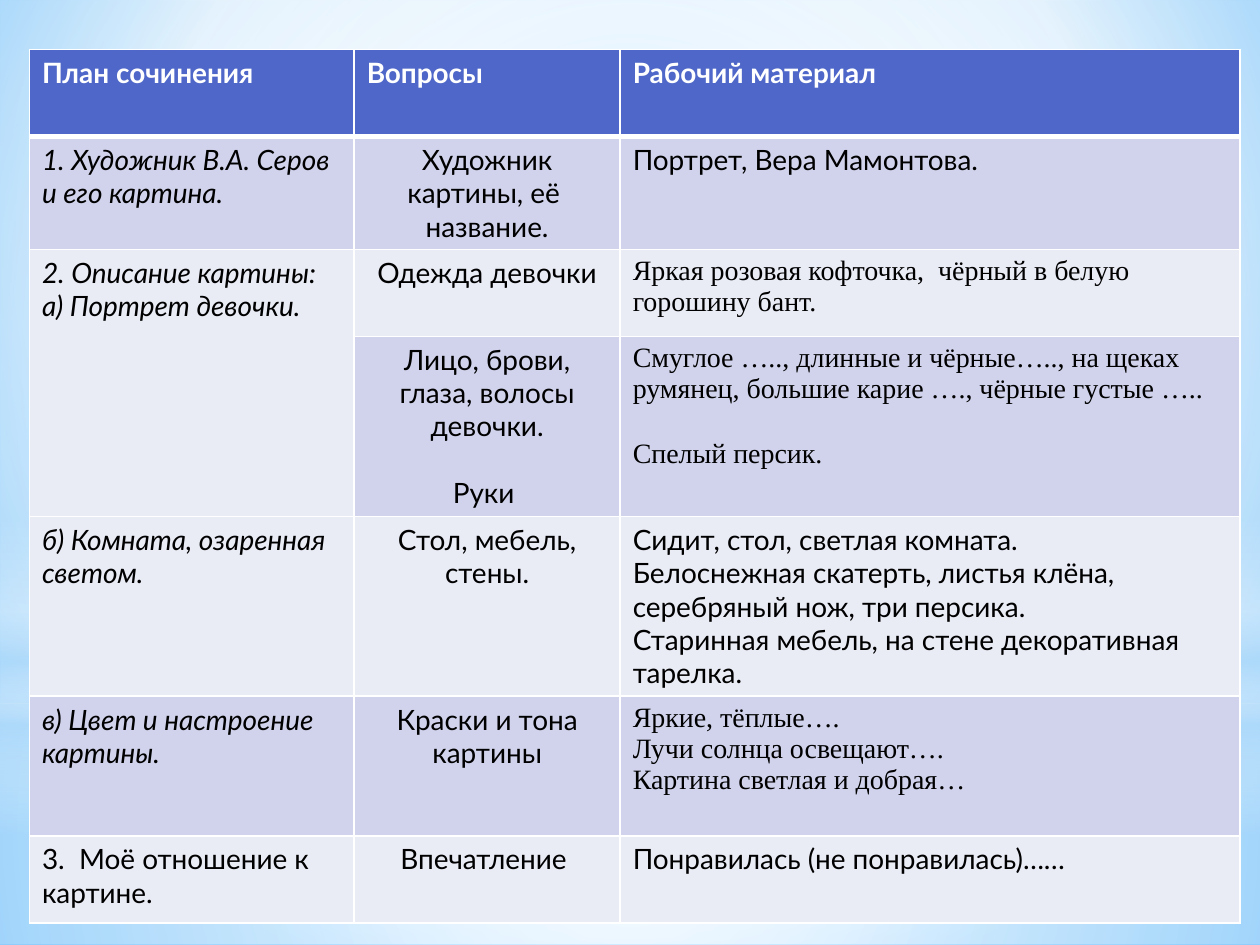
from lxml import etree
from pptx import Presentation
from pptx.dml.color import RGBColor
from pptx.enum.shapes import MSO_SHAPE
from pptx.enum.text import PP_ALIGN
from pptx.oxml.ns import qn
from pptx.util import Pt

RECT, OVAL = MSO_SHAPE.RECTANGLE, MSO_SHAPE.OVAL
LEFT, CENTER = PP_ALIGN.LEFT, PP_ALIGN.CENTER
BODY, SERIF = "Lato", "Times New Roman"
COLORS = {
    "white": "FFFFFF", "black": "000000", "sky": "B4DCFA",
    "sky_light": "9ED5FF", "sky_deep": "5BB9FF",
    "header": "4E67C8", "band": "D0D3EB", "pale": "E9EBF5",
}
MIDDLE = (50, 50, 50, 50)


def set_gradient(parent, stops, focus=None):
    """Swap the solid fill in parent for a gradient: round at focus, or vertical without one.

    A stop is position, colour name and opacity, all in percent.
    """
    gradient = etree.Element(qn("a:gradFill"), rotWithShape="1")
    stop_list = etree.SubElement(gradient, qn("a:gsLst"))
    for position, color, opacity in stops:
        stop = etree.SubElement(stop_list, qn("a:gs"), pos=str(position * 1000))
        tint = etree.SubElement(stop, qn("a:srgbClr"), val=COLORS[color])
        if opacity < 100:
            etree.SubElement(tint, qn("a:alpha"), val=str(opacity * 1000))
    if focus:
        path = etree.SubElement(gradient, qn("a:path"), path="circle")
        sides = {side: str(value * 1000) for side, value in zip("ltrb", focus)}
        etree.SubElement(path, qn("a:fillToRect"), **sides)
    else:
        etree.SubElement(gradient, qn("a:lin"), ang="5400000", scaled="0")
    parent.replace(parent.find(qn("a:solidFill")), gradient)


def set_borders(cell, widths):
    """Draw white borders; widths are left, right, top and bottom in points."""
    props = cell._tc.get_or_add_tcPr()
    for index, (side, width) in enumerate(zip("LRTB", widths)):
        line = etree.Element(qn(f"a:ln{side}"), w=str(Pt(width)))
        fill = etree.SubElement(line, qn("a:solidFill"))
        etree.SubElement(fill, qn("a:srgbClr"), val=COLORS["white"])
        props.insert(index, line)


prs = Presentation()
prs.slide_width, prs.slide_height = Pt(720), Pt(540)
slide = prs.slides.add_slide(prs.slide_layouts[6])

# Sky backdrop
slide.background.fill.solid()
set_gradient(
    slide._element.find(".//" + qn("p:bgPr")),
    [(0, "sky_light", 100), (60, "white", 100), (100, "sky_deep", 100)],
    (20, 10, 20, 60),
)
glows = [
    (RECT, 402, 138, [(0, "white", 91), (37, "white", 76), (100, "sky", 79)], MIDDLE),
    (RECT, 0, 402, [(0, "white", 89), (48, "white", 62), (100, "sky", 79)], MIDDLE),
    (RECT, 297, 180, [(0, "white", 0), (29, "white", 30), (45, "sky", 40),
                      (55, "white", 26), (65, "sky", 60), (100, "white", 0)], None),
    (OVAL, 126, 402, [(0, "white", 100), (56, "white", 0)], MIDDLE),
]
for kind, top, height, stops, focus in glows:
    glow = slide.shapes.add_shape(kind, 0, Pt(top), Pt(720), Pt(height))
    glow.shadow.inherit = False
    glow.line.fill.background()
    glow.fill.solid()
    set_gradient(glow._element.spPr, stops, focus)

# Essay plan: an empty line in a cell stands for a gap before the next paragraph
plan = [
    ("План сочинения", "Вопросы", "Рабочий материал"),
    ("1. Художник В.А. Серов и его картина.",
     "Художник картины, её  название.",
     "Портрет, Вера Мамонтова."),
    ("2. Описание картины:\nа) Портрет девочки.",
     "Одежда девочки",
     "Яркая розовая кофточка,  чёрный в белую горошину бант."),
    ("",
     "Лицо, брови, глаза, волосы девочки.\n\nРуки ",
     "Смуглое ….., длинные и чёрные….., на щеках румянец, "
     "большие карие …., чёрные густые …..\n\nСпелый персик."),
    ("б) Комната, озаренная светом.",
     "Стол, мебель, стены.",
     "Сидит, стол, светлая комната.\n"
     "Белоснежная скатерть, листья клёна, серебряный нож, три персика.\n"
     "Старинная мебель, на стене декоративная тарелка."),
    ("в) Цвет и настроение картины.",
     "Краски и тона картины",
     "Яркие, тёплые….\nЛучи солнца освещают….\nКартина светлая и добрая…"),
    ("3.  Моё отношение к картине.",
     "Впечатление ",
     "Понравилась (не понравилась)……"),
]
row_fills = ["header", "band", "pale", "band", "pale", "band", "pale"]
row_heights = [49.7, 64.6, 49.7, 102.9, 102.3, 80, 49.7]
column_widths = [185.6, 152, 354.2]
serif_rows = {2, 3, 5}
last_row = len(plan) - 1

table = slide.shapes.add_table(
    len(plan), len(column_widths), Pt(16.8), Pt(28.2),
    Pt(sum(column_widths)), Pt(sum(row_heights)),
).table
table.horz_banding = False
for column, width in zip(table.columns, column_widths):
    column.width = Pt(width)
for row, height in zip(table.rows, row_heights):
    row.height = Pt(height)
table.cell(2, 0).merge(table.cell(3, 0))

for r, texts in enumerate(plan):
    for c, text in enumerate(texts):
        cell = table.cell(r, c)
        cell.fill.solid()
        # The merged plan cell keeps one fill over both of its rows
        fill_name = "pale" if cell.is_spanned else row_fills[r]
        cell.fill.fore_color.rgb = RGBColor.from_string(COLORS[fill_name])
        set_borders(cell, (1, 1, 3 if r == 1 else 1, 3 if r == 0 else 1))
        if cell.is_spanned:
            continue
        frame = cell.text_frame
        for p, block in enumerate(text.split("\n\n")):
            for n, line in enumerate(block.split("\n")):
                first = p == 0 and n == 0
                paragraph = frame.paragraphs[0] if first else frame.add_paragraph()
                paragraph.alignment = CENTER if c == 1 and r > 0 else LEFT
                if p > 0 and n == 0:
                    paragraph.space_before = Pt(19)
                run = paragraph.add_run()
                run.text = line
                font = run.font
                font.size = Pt(16)
                font.name = SERIF if c == 2 and r in serif_rows else BODY
                font.bold = r == 0
                font.italic = c == 0 and 0 < r < last_row
                color = "white" if r == 0 else "black"
                font.color.rgb = RGBColor.from_string(COLORS[color])

prs.save("out.pptx")
